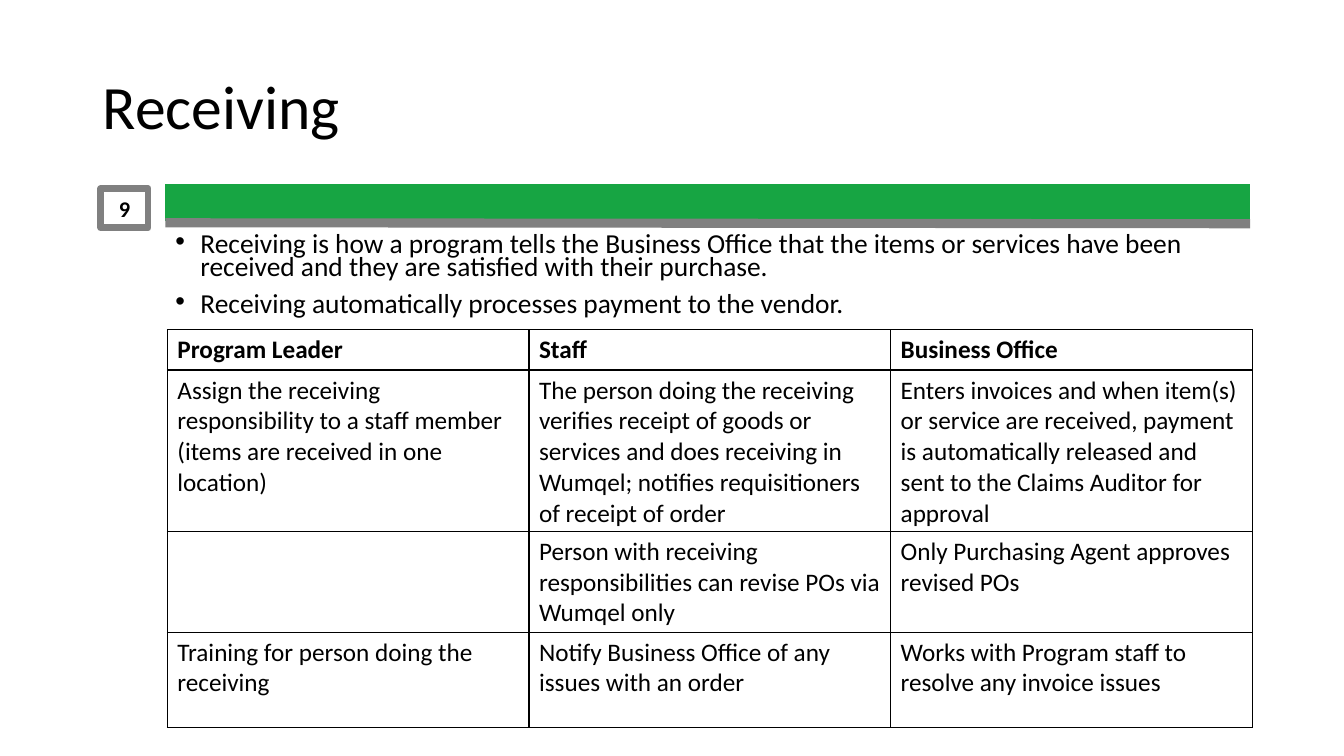
from lxml.etree import SubElement
from pptx import Presentation
from pptx.dml.color import RGBColor
from pptx.enum.shapes import MSO_CONNECTOR, MSO_SHAPE
from pptx.enum.text import MSO_ANCHOR, PP_ALIGN
from pptx.oxml.ns import qn
from pptx.util import Inches, Pt

COLORS = {"text": "000000", "green": "17A543", "gray": "808080"}

BULLETS = [
    "Receiving is how a program tells the Business Office that the items or "
    "services have been received and they are satisfied with their purchase.",
    "Receiving automatically processes payment to the vendor.",
]

DUTIES = [
    ["Program Leader", "Staff", "Business Office"],
    [
        "Assign the receiving responsibility to a staff member "
        "(items are received in one location)",
        "The person doing the receiving verifies receipt of goods or services and "
        "does receiving in Wumqel; notifies requisitioners of receipt of order",
        "Enters invoices and when item(s) or service are received, payment is "
        "automatically released and sent to the Claims Auditor for approval",
    ],
    [
        "",
        "Person with receiving responsibilities can revise POs via Wumqel only",
        "Only Purchasing Agent approves revised POs",
    ],
    [
        "Training for person doing the receiving",
        "Notify Business Office of any issues with an order",
        "Works with Program staff to resolve any invoice issues",
    ],
]
ROW_HEIGHTS = [0.38, 1.52, 0.95, 0.95]


def color(name):
    return RGBColor.from_string(COLORS[name])


class SlideBuilder:
    font = "Calibri"

    def __init__(self, slide):
        self.slide = slide

    def add_run(self, paragraph, text, size, bold=False):
        run = paragraph.add_run()
        run.text = text
        run.font.name = self.font
        run.font.size = Pt(size)
        run.font.bold = bold
        run.font.color.rgb = color("text")

    def add_text(self, box, texts, size, line_spacing, anchor=MSO_ANCHOR.TOP, bullet=False):
        frame = self.slide.shapes.add_textbox(*map(Inches, box)).text_frame
        frame.word_wrap = True
        frame.vertical_anchor = anchor
        for index, text in enumerate(texts):
            paragraph = frame.add_paragraph() if index else frame.paragraphs[0]
            paragraph.line_spacing = line_spacing
            if bullet:
                paragraph.space_before = Pt(10)
                self.add_bullet(paragraph)
            self.add_run(paragraph, text, size)

    def add_bullet(self, paragraph):
        properties = paragraph._p.get_or_add_pPr()
        properties.set("marL", str(Inches(0.25)))
        properties.set("indent", str(-Inches(0.25)))
        SubElement(properties, qn("a:buFont"), typeface="Arial")
        SubElement(properties, qn("a:buChar"), char="•")

    def add_line(self, start, end, color_name, width):
        line = self.slide.shapes.add_connector(
            MSO_CONNECTOR.STRAIGHT, *map(Inches, start + end))
        line.line.color.rgb = color(color_name)
        line.line.width = Pt(width)
        SubElement(line._element.spPr, qn("a:effectLst"))

    def add_number_box(self, box, number):
        shape = self.slide.shapes.add_shape(MSO_SHAPE.RECTANGLE, *map(Inches, box))
        shape.shadow.inherit = False
        shape.fill.background()
        shape.line.color.rgb = color("gray")
        shape.line.width = Pt(4.75)
        frame = shape.text_frame
        frame.margin_left = frame.margin_right = 0
        frame.vertical_anchor = MSO_ANCHOR.MIDDLE
        paragraph = frame.paragraphs[0]
        paragraph.alignment = PP_ALIGN.CENTER
        self.add_run(paragraph, number, 16, bold=True)

    def add_table(self, box, rows, row_heights, size):
        table = self.slide.shapes.add_table(
            len(rows), len(rows[0]), *map(Inches, box)).table
        table.first_row = table.horz_banding = False
        for row, height in zip(table.rows, row_heights):
            row.height = Inches(height)
        for row_index, texts in enumerate(rows):
            for column_index, text in enumerate(texts):
                cell = table.cell(row_index, column_index)
                self.add_borders(cell)
                cell.fill.background()
                if text:
                    self.add_run(cell.text_frame.paragraphs[0], text, size,
                                 bold=row_index == 0)

    def add_borders(self, cell):
        properties = cell._tc.get_or_add_tcPr()
        for side in ("L", "R", "T", "B"):
            border = SubElement(properties, qn(f"a:ln{side}"), w=str(Pt(1)))
            fill = SubElement(border, qn("a:solidFill"))
            SubElement(fill, qn("a:srgbClr"), val=COLORS["text"])


def main():
    presentation = Presentation()
    presentation.slide_width = Inches(13.33)
    presentation.slide_height = Inches(7.5)
    builder = SlideBuilder(presentation.slides.add_slide(presentation.slide_layouts[6]))

    builder.add_text((0.92, 0.36, 11.5, 1.45), ["Receiving"], 44, 0.9, MSO_ANCHOR.MIDDLE)
    builder.add_text((1.64, 2.28, 10.77, 0.99), BULLETS, 19.6, 0.7, bullet=True)
    builder.add_line((1.64, 2.01), (12.4, 2.01), "green", 26.25)
    builder.add_number_box((1, 1.87, 0.47, 0.39), "9")
    builder.add_line((1.64, 2.21), (12.4, 2.22), "gray", 6.5)
    builder.add_table((1.66, 3.27, 10.76, 3.8), DUTIES, ROW_HEIGHTS, 18)

    presentation.save("out.pptx")


if __name__ == "__main__":
    main()
